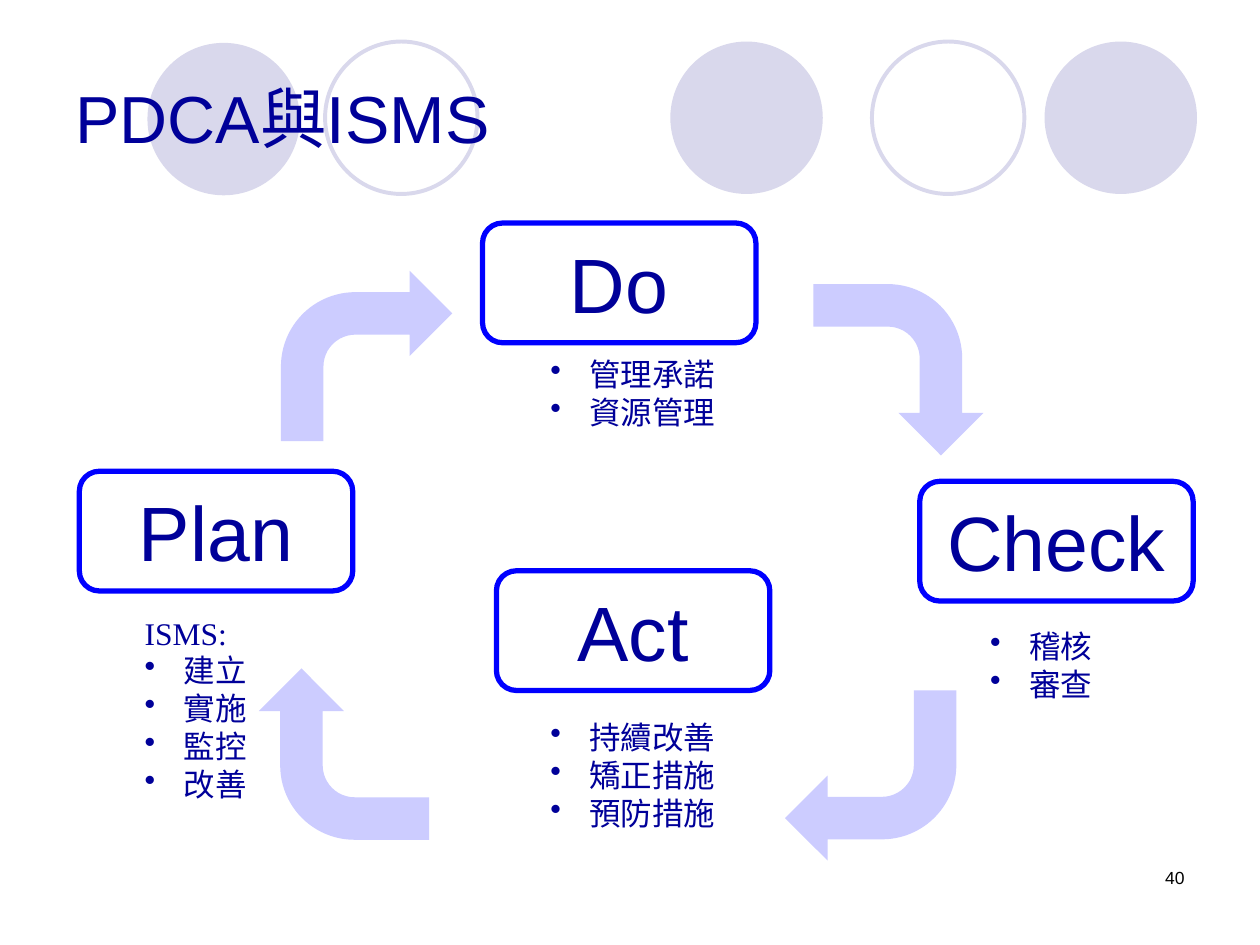
import pptx
import pptx.util
import pptx.dml.color
import pptx.enum.shapes
import pptx.enum.text
import pptx.oxml.ns
import lxml.etree

WIDE, HIGH = pptx.util.Inches(10), pptx.util.Inches(7.5)
COLS, ROWS = 100, 75
INDENT = 3.1
COLORS = {"navy": "000099", "blue": "0000FF", "pale": "CCCCFF",
          "mist": "D9D8EC", "black": "000000"}
KINDS = pptx.enum.shapes.MSO_SHAPE
ALIGN = pptx.enum.text.PP_ALIGN
ANCHOR = pptx.enum.text.MSO_ANCHOR
DISC = 12.1
CARD = (21.7, 9.5)
ARROW = (13.6, 13.5)

DISCS = [(53.2, 3.3, True), (82.9, 3.3, True), (11.7, 3.4, True),
         (69.2, 3.3, False), (25.8, 3.3, False)]
CARDS = [("Plan", 6.3, 37.4), ("Do", 38.3, 17.7),
         ("Check", 73, 38.2), ("Act", 39.4, 45.3)]
LISTS = [
    ((10.5, 48.2, 10.2, 16.2), "ISMS:", ["建立", "實施", "監控", "改善"]),
    ((42.7, 27.7, 15.3, 7.1), None, ["管理承諾", "資源管理"]),
    ((77.6, 49.3, 10.2, 7.1), None, ["稽核", "審查"]),
    ((42.7, 56.5, 15.3, 10.1), None, ["持續改善", "矯正措施", "預防措施"]),
]
ARROWS = [(22.3, 21.5), (64.5, 22.6), (62.3, 54.8), (20.5, 53.1)]


def color(name):
    return pptx.dml.color.RGBColor.from_string(COLORS[name])


def place(left, top, wide, high):
    cell, row = WIDE / COLS, HIGH / ROWS
    return [round(n) for n in (left * cell, top * row, wide * cell, high * row)]


def draw(slide, kind, box, fill=None, line=None, weight=1, turn=0):
    shape = slide.shapes.add_shape(kind, *place(*box))
    shape.shadow.inherit = False
    shape.rotation = turn
    if fill:
        shape.fill.solid()
        shape.fill.fore_color.rgb = color(fill)
    else:
        shape.fill.background()
    if line:
        shape.line.color.rgb = color(line)
        shape.line.width = pptx.util.Pt(weight)
    else:
        shape.line.fill.background()
    return shape


def write(para, text, size=18, font="Arial", ink="navy", align=ALIGN.LEFT):
    para.alignment = align
    run = para.add_run()
    run.text = text
    run.font.size = pptx.util.Pt(size)
    run.font.name = font
    run.font.color.rgb = color(ink)


def label(slide, box, text, anchor=ANCHOR.TOP, **style):
    frame = slide.shapes.add_textbox(*place(*box)).text_frame
    frame.word_wrap = True
    frame.vertical_anchor = anchor
    write(frame.paragraphs[0], text, **style)


def bullet(para):
    props = para._p.get_or_add_pPr()
    indent = round(INDENT * WIDE / COLS)
    props.set("marL", str(indent))
    props.set("indent", str(-indent))
    mark = lxml.etree.SubElement(props, pptx.oxml.ns.qn("a:buChar"))
    mark.set("char", "•")


def points(slide, box, head, items):
    frame = slide.shapes.add_textbox(*place(*box)).text_frame
    frame.word_wrap = False
    frame.auto_size = pptx.enum.text.MSO_AUTO_SIZE.SHAPE_TO_FIT_TEXT
    lines = ([head] if head else []) + items
    for spot, text in enumerate(lines):
        para = frame.add_paragraph() if spot else frame.paragraphs[0]
        write(para, text, font="Times New Roman")
        if text != head:
            bullet(para)


def card(slide, text, left, top):
    shape = draw(slide, KINDS.ROUNDED_RECTANGLE, (left, top, *CARD),
                 line="blue", weight=3)
    shape.text_frame.vertical_anchor = ANCHOR.MIDDLE
    write(shape.text_frame.paragraphs[0], text, size=44, align=ALIGN.CENTER)


def main():
    deck = pptx.Presentation()
    deck.slide_width, deck.slide_height = WIDE, HIGH
    slide = deck.slides.add_slide(deck.slide_layouts[6])
    for left, top, full in DISCS:
        style = {"fill": "mist"} if full else {"line": "mist", "weight": 2.25}
        draw(slide, KINDS.OVAL, (left, top, DISC, DISC), **style)
    label(slide, (5, 3, 90, 12.5), "PDCA與ISMS", anchor=ANCHOR.MIDDLE, size=38)
    label(slide, (71.7, 68.3, 23.3, 5), "40", size=10, ink="black",
          align=ALIGN.RIGHT)
    for item in CARDS:
        card(slide, *item)
    for item in LISTS:
        points(slide, *item)
    for step, spot in enumerate(ARROWS):
        draw(slide, KINDS.BENT_ARROW, (*spot, *ARROW), fill="pale",
             turn=90 * step)
    deck.save("out.pptx")


if __name__ == "__main__":
    main()
